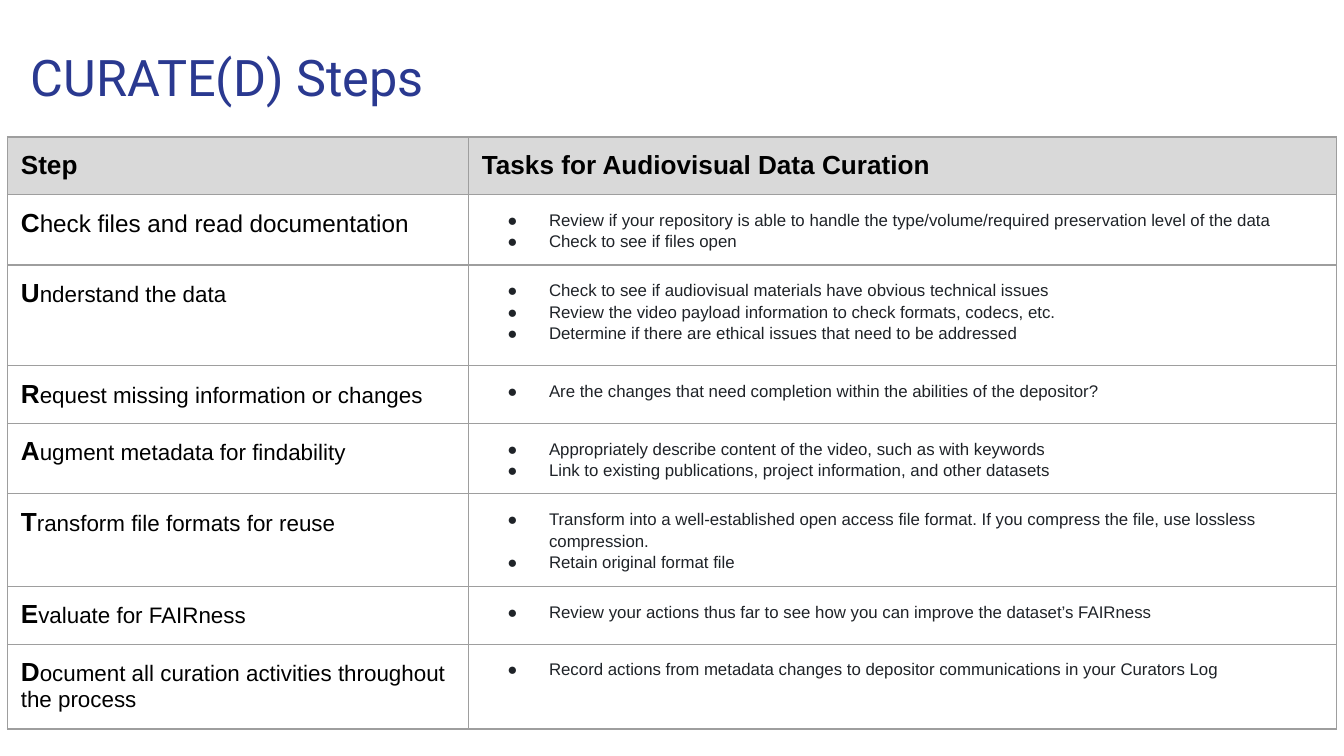
from lxml.etree import SubElement
from pptx import Presentation
from pptx.dml.color import RGBColor
from pptx.enum.text import MSO_ANCHOR, MSO_AUTO_SIZE, PP_ALIGN
from pptx.oxml import parse_xml
from pptx.oxml.ns import nsdecls, qn
from pptx.util import Inches, Pt

NAVY = RGBColor(0x2A, 0x39, 0x90)
BLACK = RGBColor(0x00, 0x00, 0x00)
INK = RGBColor(0x1F, 0x23, 0x28)
HEADER_GRAY = RGBColor(0xD9, 0xD9, 0xD9)
RULE_GRAY = RGBColor(0x9E, 0x9E, 0x9E)
WHITE = RGBColor(0xFF, 0xFF, 0xFF)

SLIDE_WIDTH = Inches(10)
SLIDE_HEIGHT = SLIDE_WIDTH * 9 // 16
PADDING = Inches(0.1)
COLUMN_WIDTHS = (3.43, 6.46)
HEADINGS = ("Step", "Tasks for Audiovisual Data Curation")
HEADER_HEIGHT = 0.43
STEPS = [
    ("Check files and read documentation", 13, 0.52, [
        "Review if your repository is able to handle the type/volume/required preservation level of the data",
        "Check to see if files open",
    ]),
    ("Understand the data", 12, 0.75, [
        "Check to see if audiovisual materials have obvious technical issues",
        "Review the video payload information to check formats, codecs, etc.",
        "Determine if there are ethical issues that need to be addressed",
    ]),
    ("Request missing information or changes", 12, 0.43, [
        "Are the changes that need completion within the abilities of the depositor?",
    ]),
    ("Augment metadata for findability", 12, 0.52, [
        "Appropriately describe content of the video, such as with keywords",
        "Link to existing publications, project information, and other datasets",
    ]),
    ("Transform file formats for reuse", 12, 0.69, [
        "Transform into a well-established open access file format. If you compress the file, use lossless compression.",
        "Retain original format file",
    ]),
    ("Evaluate for FAIRness", 12, 0.43, [
        "Review your actions thus far to see how you can improve the dataset’s FAIRness",
    ]),
    ("Document all curation activities throughout the process", 12, 0.63, [
        "Record actions from metadata changes to depositor communications in your Curators Log",
    ]),
]


def add_text(paragraph, text, size, color=BLACK, font="Arial", bold=False):
    run = paragraph.add_run()
    run.text = text
    run.font.size = Pt(size)
    run.font.name = font
    run.font.bold = bold
    run.font.color.rgb = color


def pad(area):
    area.margin_left = area.margin_right = PADDING
    area.margin_top = area.margin_bottom = PADDING
    area.vertical_anchor = MSO_ANCHOR.TOP


def style_cell(cell, fill):
    pad(cell)
    cell.fill.solid()
    cell.fill.fore_color.rgb = fill
    properties = cell._tc.get_or_add_tcPr()
    for index, side in enumerate(("lnL", "lnR", "lnT", "lnB")):
        properties.insert(index, parse_xml(
            f'<a:{side} {nsdecls("a")} w="{Pt(0.75)}"><a:solidFill>'
            f'<a:srgbClr val="{RULE_GRAY}"/></a:solidFill></a:{side}>'))


def add_bullet(paragraph):
    paragraph.line_spacing = 1.15
    properties = paragraph._p.get_or_add_pPr()
    properties.set("marL", str(Inches(0.5)))
    properties.set("indent", str(Inches(-0.31)))
    SubElement(SubElement(properties, qn("a:buClr")), qn("a:srgbClr"), val=str(INK))
    SubElement(properties, qn("a:buFont"), typeface="Arial")
    SubElement(properties, qn("a:buChar"), char="●")


def place_title(slide, left, top, width, height):
    title = slide.shapes.title
    title.left, title.top = left, top
    title.width, title.height = width, height
    frame = title.text_frame
    frame.auto_size = MSO_AUTO_SIZE.NONE
    frame.word_wrap = True
    pad(frame)
    heading = frame.paragraphs[0]
    heading.alignment = PP_ALIGN.LEFT
    add_text(heading, "CURATE(D) Steps", 27, color=NAVY, font="Roboto")


def place_steps_table(slide, left, top, width, height):
    table = slide.shapes.add_table(
        len(STEPS) + 1, len(HEADINGS), left, top, width, height).table
    table.first_row = table.horz_banding = False
    for column, column_width in zip(table.columns, COLUMN_WIDTHS):
        column.width = Inches(column_width)

    table.rows[0].height = Inches(HEADER_HEIGHT)
    for cell, heading in zip(table.rows[0].cells, HEADINGS):
        style_cell(cell, HEADER_GRAY)
        add_text(cell.text_frame.paragraphs[0], heading, 14, bold=True)

    for row_index, (step, step_size, row_height, tasks) in enumerate(STEPS, 1):
        table.rows[row_index].height = Inches(row_height)
        step_cell, tasks_cell = table.rows[row_index].cells
        style_cell(step_cell, WHITE)
        style_cell(tasks_cell, WHITE)

        step_line = step_cell.text_frame.paragraphs[0]
        add_text(step_line, step[0], 14, bold=True)
        add_text(step_line, step[1:], step_size)

        task_frame = tasks_cell.text_frame
        for task_index, task in enumerate(tasks):
            task_line = task_frame.add_paragraph() if task_index else task_frame.paragraphs[0]
            add_bullet(task_line)
            add_text(task_line, task, 9, color=INK)


def main():
    deck = Presentation()
    deck.slide_width, deck.slide_height = SLIDE_WIDTH, SLIDE_HEIGHT
    slide = deck.slides.add_slide(deck.slide_layouts[5])
    place_title(slide, Inches(0.13), Inches(0.24), Inches(9.32), Inches(0.66))
    table_width = Inches(sum(COLUMN_WIDTHS))
    table_left = (SLIDE_WIDTH - table_width) // 2
    place_steps_table(slide, table_left, Inches(1.02), table_width, Inches(4.45))
    deck.save("out.pptx")


if __name__ == "__main__":
    main()
